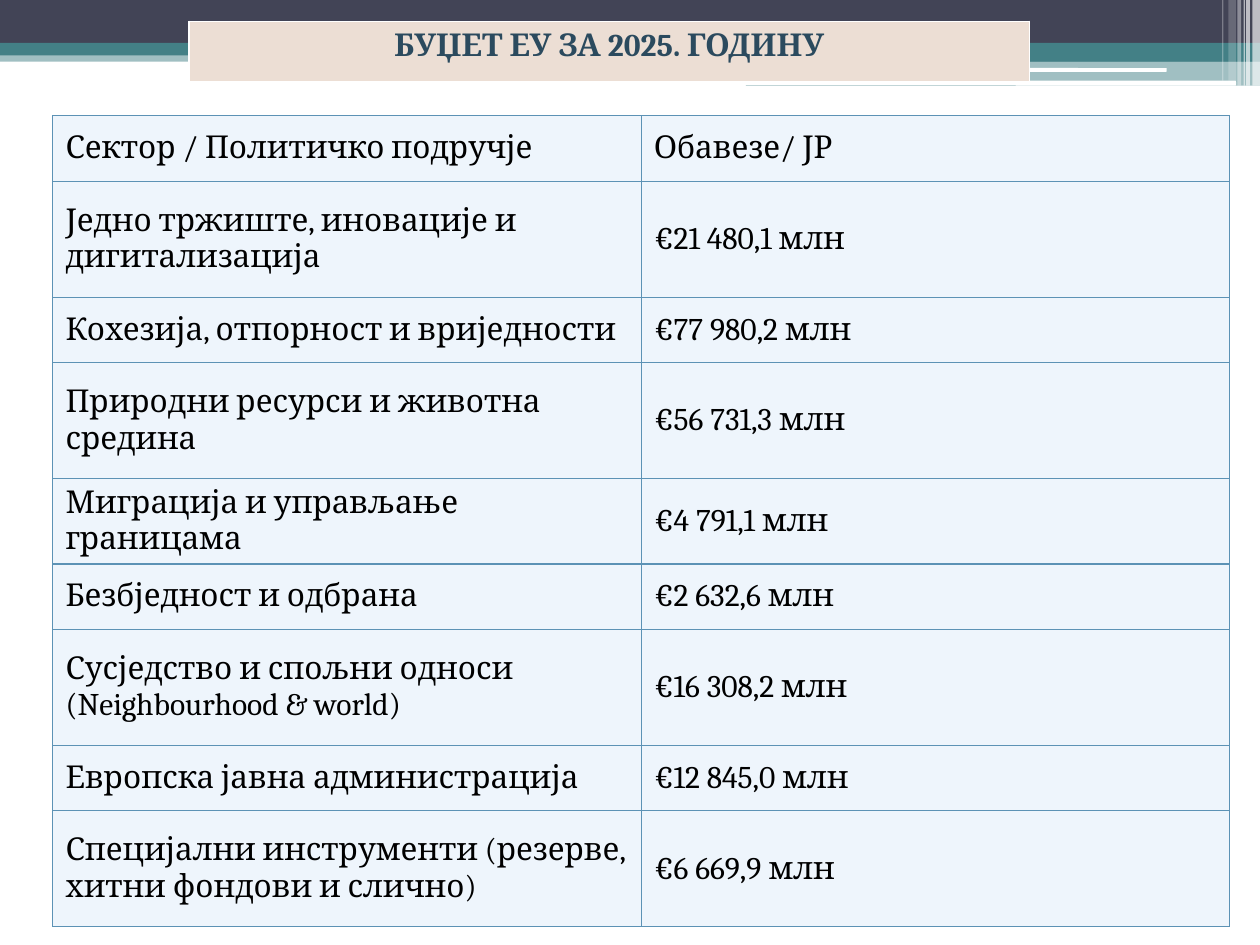
from dataclasses import dataclass

from lxml.etree import SubElement
from pptx import Presentation
from pptx.dml.color import RGBColor
from pptx.enum.shapes import MSO_SHAPE as Preset
from pptx.enum.text import MSO_ANCHOR as Anchor, PP_ALIGN as Align
from pptx.oxml.ns import qn
from pptx.util import Inches, Pt


@dataclass(frozen=True)
class Theme:
    navy: str = "424456"
    teal: str = "438086"
    white: str = "FFFFFF"
    heading: str = "2B4A5E"
    heading_fill: str = "ECDED4"
    body: str = "000000"
    body_fill: str = "EEF5FC"
    grid: str = "5C92B5"
    font: str = "Cambria"
    size: int = 18


theme = Theme()


def add_grid(left, top, widths, heights):
    grid = slide.shapes.add_table(
        len(heights), len(widths), Inches(left), Inches(top),
        Inches(sum(widths)), Inches(sum(heights))).table
    grid.first_row = grid.horz_banding = False
    for column, width in zip(grid.columns, widths):
        column.width = Inches(width)
    for row, height in zip(grid.rows, heights):
        row.height = Inches(height)
    return grid


def write_cell(cell, text, color, fill, border, edges, bold=False):
    properties = cell._tc.get_or_add_tcPr()
    for side, points in zip("LRTB", edges):
        line = SubElement(properties, qn(f"a:ln{side}"), w=str(Pt(points)))
        SubElement(SubElement(line, qn("a:solidFill")), qn("a:srgbClr"), val=border)
    cell.fill.solid()
    cell.fill.fore_color.rgb = RGBColor.from_string(fill)
    run = cell.text_frame.paragraphs[0].add_run()
    run.text = text
    run.font.name = theme.font
    run.font.size = Pt(theme.size)
    run.font.bold = bold
    run.font.color.rgb = RGBColor.from_string(color)


prs = Presentation()
prs.slide_width, prs.slide_height = Inches(10), Inches(7.5)
slide = prs.slides.add_slide(prs.slide_layouts[6])

header_bars = [
    (0, 0.4, 10, 0.09, theme.teal, 50, Preset.RECTANGLE),
    (0, 0, 10, 0.34, theme.navy, 100, Preset.RECTANGLE),
    (0, 0.34, 10, 0.1, theme.teal, 100, Preset.RECTANGLE),
    (5.92, 0.39, 4.08, 0.1, theme.teal, 100, Preset.RECTANGLE),
    (5.92, 0.48, 4.08, 0.2, theme.teal, 50, Preset.RECTANGLE),
    (5.91, 0.54, 3.35, 0.03, theme.white, 100, Preset.ROUNDED_RECTANGLE),
    (8.06, 0.64, 1.75, 0.04, theme.white, 100, Preset.ROUNDED_RECTANGLE),
]
corner_stripes = [
    (9.94, 0.06, 0.68, 65), (9.89, 0.03, 0.68, 65), (9.87, 0.01, 0.68, 60),
    (9.82, 0.03, 0.68, 40), (9.75, 0.06, 0.64, 20), (9.7, 0.01, 0.64, 30),
]
header_bars += [(left, 0, width, height, theme.white, opacity, Preset.RECTANGLE)
                for left, width, height, opacity in corner_stripes]

for left, top, width, height, color, opacity, preset in header_bars:
    bar = slide.shapes.add_shape(
        preset, Inches(left), Inches(top), Inches(width), Inches(height))
    bar.shadow.inherit = False
    bar.line.fill.background()
    bar.fill.solid()
    bar.fill.fore_color.rgb = RGBColor.from_string(color)
    if opacity < 100:
        tint = bar._element.spPr.find(f"{qn('a:solidFill')}/{qn('a:srgbClr')}")
        SubElement(tint, qn("a:alpha"), val=str(opacity * 1000))

budget = [
    ("Сектор / Политичко подручје", "Обавезе/ ЈР", 0.52),
    ("Једно тржиште, иновације и дигитализација", "€21 480,1 млн", 0.92),
    ("Кохезија, отпорност и вриједности", "€77 980,2 млн", 0.52),
    ("Природни ресурси и животна средина", "€56 731,3 млн", 0.92),
    ("Миграција и управљање границама", "€4 791,1 млн", 0.52),
    ("Безбједност и одбрана", "€2 632,6 млн", 0.52),
    ("Сусједство и спољни односи (Neighbourhood & world)", "€16 308,2 млн", 0.92),
    ("Европска јавна администрација", "€12 845,0 млн", 0.52),
    ("Специјални инструменти (резерве, хитни фондови и слично)", "€6 669,9 млн", 0.92),
]
budget_grid = add_grid(0.42, 0.92, [4.67, 4.67], [height for *_, height in budget])
for row, (sector, commitment, _) in enumerate(budget):
    for column, text in enumerate((sector, commitment)):
        cell = budget_grid.cell(row, column)
        write_cell(cell, text, theme.body, theme.body_fill, theme.grid, [0.75] * 4)
        cell.vertical_anchor = Anchor.MIDDLE

heading = add_grid(1.5, 0.17, [6.67], [0.49]).cell(0, 0)
write_cell(heading, "БУЏЕТ ЕУ ЗА 2025. ГОДИНУ", theme.heading, theme.heading_fill,
           theme.white, [1, 1, 1, 3], bold=True)
heading.text_frame.paragraphs[0].alignment = Align.CENTER

prs.save("out.pptx")
